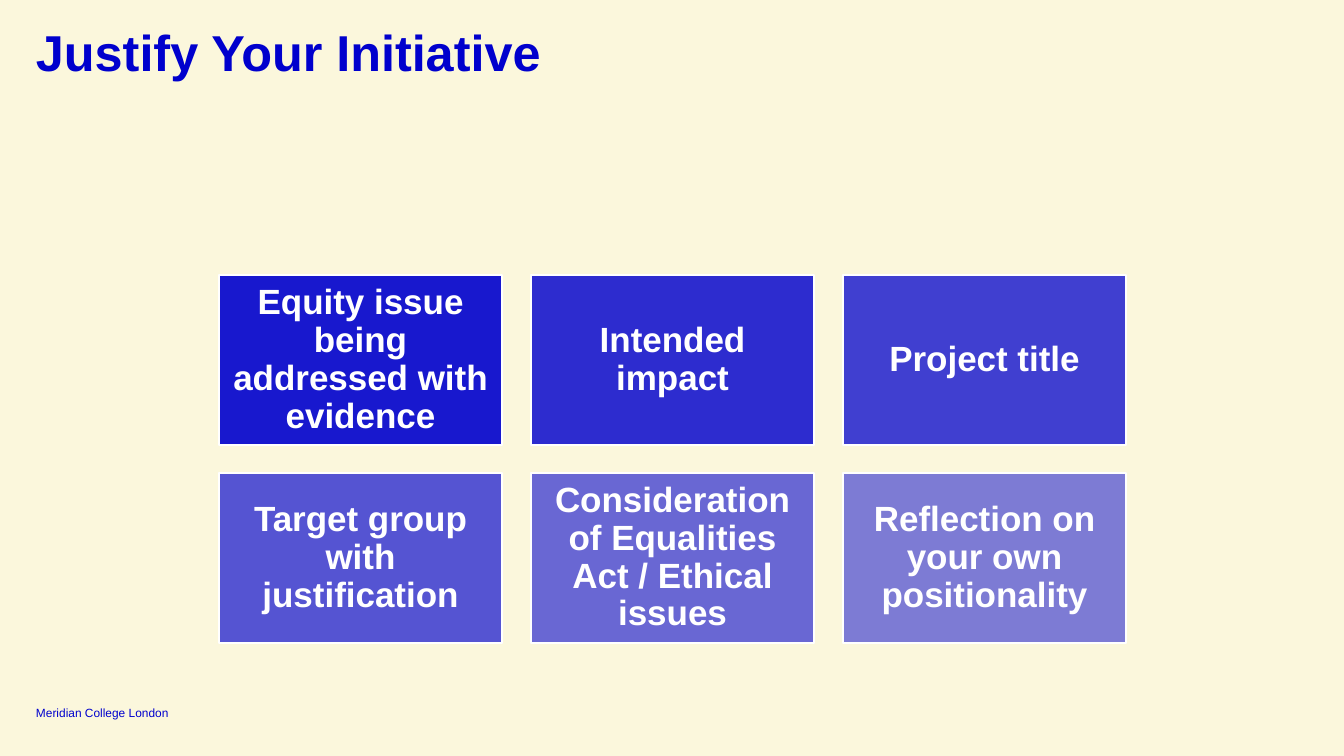
from pptx import Presentation
from pptx.dml.color import RGBColor
from pptx.enum.shapes import MSO_SHAPE as Shape
from pptx.enum.text import MSO_ANCHOR as Anchor, PP_ALIGN as Align
from pptx.oxml.ns import qn
from pptx.util import Pt
from lxml.etree import SubElement

EMU_PER_PX = 914400 / 100.8
CREAM = RGBColor(0xFB, 0xF7, 0xDC)
BLUE = RGBColor(0x00, 0x00, 0xCD)
WHITE = RGBColor(0xFF, 0xFF, 0xFF)
TOPICS = [
    "Equity issue being addressed with evidence",
    "Intended impact",
    "Project title",
    "Target group with justification",
    "Consideration of Equalities Act / Ethical issues",
    "Reflection on your own positionality",
]


def px(length):
    return round(length * EMU_PER_PX)


class SlideBuilder:
    """Draws styled labels and cards on one slide."""

    font_name = "Arial"

    def __init__(self, slide):
        self.slide = slide
        background = slide.background.fill
        background.solid()
        background.fore_color.rgb = CREAM

    def set_text(self, shape, text, size, color, bold, inset, anchor, align, spacing):
        frame = shape.text_frame
        frame.word_wrap = True
        frame.vertical_anchor = anchor
        frame.margin_left = frame.margin_right = px(inset)
        frame.margin_top = frame.margin_bottom = px(inset)
        paragraph = frame.paragraphs[0]
        paragraph.text = text
        paragraph.alignment = align
        paragraph.line_spacing = spacing
        font = paragraph.font
        font.name, font.size, font.bold = self.font_name, Pt(size), bold
        font.color.rgb = color

    def label(self, box, text, size, bold=False, anchor=Anchor.TOP, spacing=1.0):
        label = self.slide.shapes.add_textbox(*map(px, box))
        self.set_text(label, text, size, BLUE, bold, 0, anchor, Align.LEFT, spacing)

    def card(self, box, text, opacity):
        card = self.slide.shapes.add_shape(Shape.RECTANGLE, *map(px, box))
        card.shadow.inherit = False
        card.fill.solid()
        card.fill.fore_color.rgb = BLUE
        color = card.element.spPr.find(qn("a:solidFill"))[0]
        SubElement(color, qn("a:alpha"), val=str(opacity * 1000))
        card.line.color.rgb = WHITE
        card.line.width = Pt(1)
        self.set_text(card, text, 25, WHITE, True, 10, Anchor.MIDDLE, Align.CENTER, 0.9)


def main():
    deck = Presentation()
    deck.slide_width, deck.slide_height = px(1344), px(756)
    builder = SlideBuilder(deck.slides.add_slide(deck.slide_layouts[6]))
    builder.label((36, 705, 156, 15), "Meridian College London", 8.5, anchor=Anchor.BOTTOM)
    builder.label((36, 28, 1272, 41), "Justify Your Initiative", 36, bold=True, spacing=0.9)
    for index, topic in enumerate(TOPICS):
        row, column = divmod(index, 3)
        box = (219 + 312 * column, 275 + 198 * row, 283, 170)
        builder.card(box, topic, 90 - 8 * index)
    deck.save("out.pptx")


if __name__ == "__main__":
    main()
